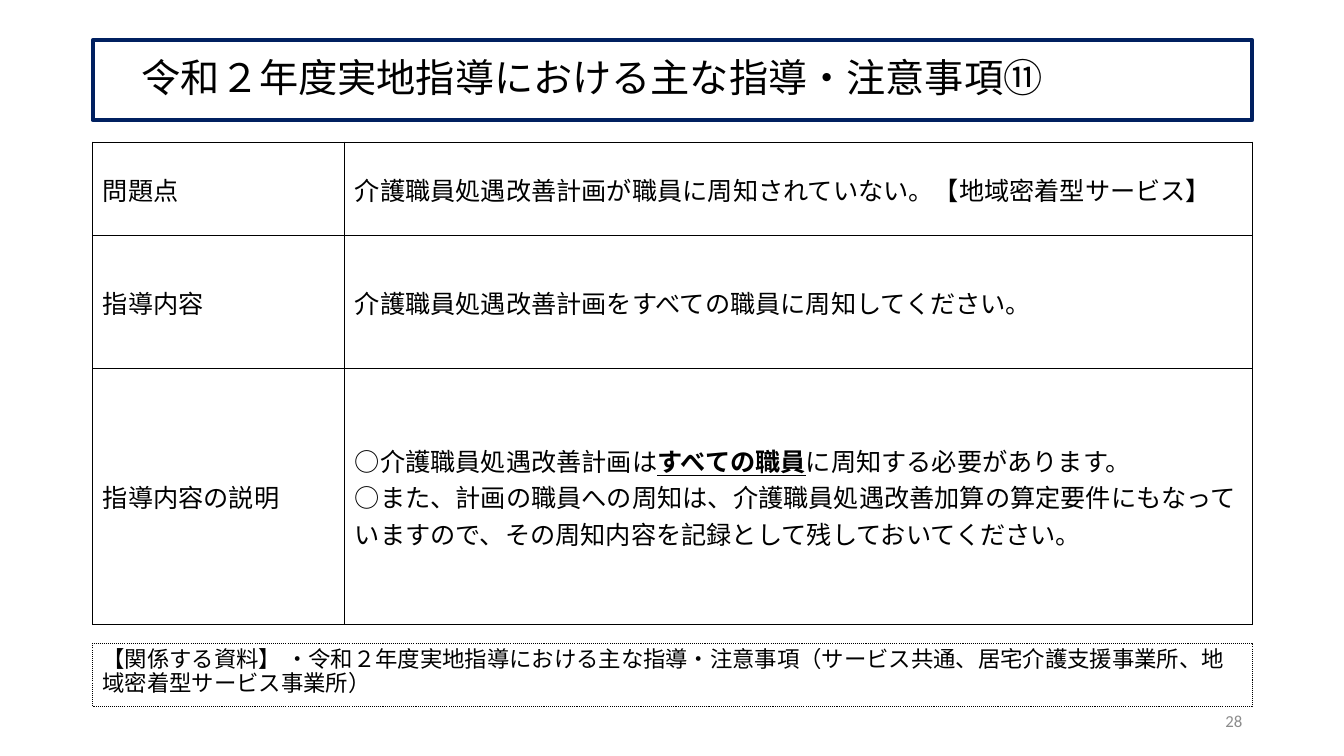
from lxml import etree
from pptx import Presentation
from pptx.dml.color import RGBColor
from pptx.enum.dml import MSO_LINE
from pptx.enum.text import MSO_ANCHOR, PP_ALIGN
from pptx.oxml.ns import qn
from pptx.util import Inches, Pt

MIDDLE, TOP = MSO_ANCHOR.MIDDLE, MSO_ANCHOR.TOP
RIGHT = PP_ALIGN.RIGHT
DOTTED = MSO_LINE.ROUND_DOT
COLORS = {"navy": "002060", "black": "000000", "gray": "8C8C8C"}
LEFT, WIDTH = 0.92, 11.5


def add_span(para, text, size, font="Calibri", color="black", strong=False):
    span = para.add_run()
    span.text = text
    span.font.name = font
    span.font.size = Pt(size)
    span.font.color.rgb = RGBColor.from_string(COLORS[color])
    if strong:
        span.font.bold = True
        span.font.underline = True


def add_box(left, top, width, height, anchor):
    box = page.shapes.add_textbox(Inches(left), Inches(top), Inches(width), Inches(height))
    box.text_frame.word_wrap = True
    box.text_frame.vertical_anchor = anchor
    return box


deck = Presentation()
deck.slide_width, deck.slide_height = Inches(13.33), Inches(7.5)
page = deck.slides.add_slide(deck.slide_layouts[6])

# Title
title = add_box(LEFT, 0.4, WIDTH, 0.79, MIDDLE)
title.line.color.rgb = RGBColor.from_string(COLORS["navy"])
title.line.width = Pt(3)
para = title.text_frame.paragraphs[0]
para.line_spacing = 0.9
add_span(para, "　令和２年度実地指導における主な指導・注意事項⑪", 28)

# Guidance table: label, then paragraphs of (text, strong) spans
rows = [
    (0.93, "問題点", [[("介護職員処遇改善計画が職員に周知されていない。【地域密着型サービス】", False)]]),
    (1.32, "指導内容", [[("介護職員処遇改善計画をすべての職員に周知してください。", False)]]),
    (2.54, "指導内容の説明", [
        [("○介護職員処遇改善計画は", False), ("すべての職員", True),
         ("に周知する必要があります。", False)],
        [("○また、計画の職員への周知は、介護職員処遇改善加算の算定要件にもなって"
          "いますので、その周知内容を記録として残しておいてください。", False)],
    ]),
]
table = page.shapes.add_table(
    len(rows), 2, Inches(LEFT), Inches(1.41), Inches(WIDTH), Inches(4.79)).table
table.first_row = table.horz_banding = False
table.columns[0].width, table.columns[1].width = Inches(2.5), Inches(9)

for index, (height, label, paragraphs) in enumerate(rows):
    table.rows[index].height = Inches(height)
    label_cell, detail_cell = table.cell(index, 0), table.cell(index, 1)
    add_span(label_cell.text_frame.paragraphs[0], label, 18, "Arial")
    frame = detail_cell.text_frame
    for number, spans in enumerate(paragraphs):
        para = frame.add_paragraph() if number else frame.paragraphs[0]
        for text, strong in spans:
            add_span(para, text, 18, strong=strong)

    # Black borders, no fill
    for cell in (label_cell, detail_cell):
        cell.vertical_anchor = MIDDLE
        properties = cell._tc.get_or_add_tcPr()
        for side in ("a:lnL", "a:lnR", "a:lnT", "a:lnB"):
            border = etree.SubElement(properties, qn(side), w=str(Pt(1)))
            fill = etree.SubElement(border, qn("a:solidFill"))
            etree.SubElement(fill, qn("a:srgbClr"), val=COLORS["black"])
        cell.fill.background()

# Slide number
number_box = add_box(9.42, 6.95, 3, 0.4, MIDDLE)
para = number_box.text_frame.paragraphs[0]
para.alignment = RIGHT
add_span(para, "28", 12, color="gray")

# Related material
related = add_box(LEFT, 6.38, WIDTH, 0.63, TOP)
related.line.color.rgb = RGBColor.from_string(COLORS["black"])
related.line.width = Pt(0.75)
related.line.dash_style = DOTTED
para = related.text_frame.paragraphs[0]
para.line_spacing = 0.9
para.space_before = Pt(10)
add_span(para, "【関係する資料】 ・令和２年度実地指導における主な指導・注意事項"
               "（サービス共通、居宅介護支援事業所、地域密着型サービス事業所）", 16)

deck.save("out.pptx")
